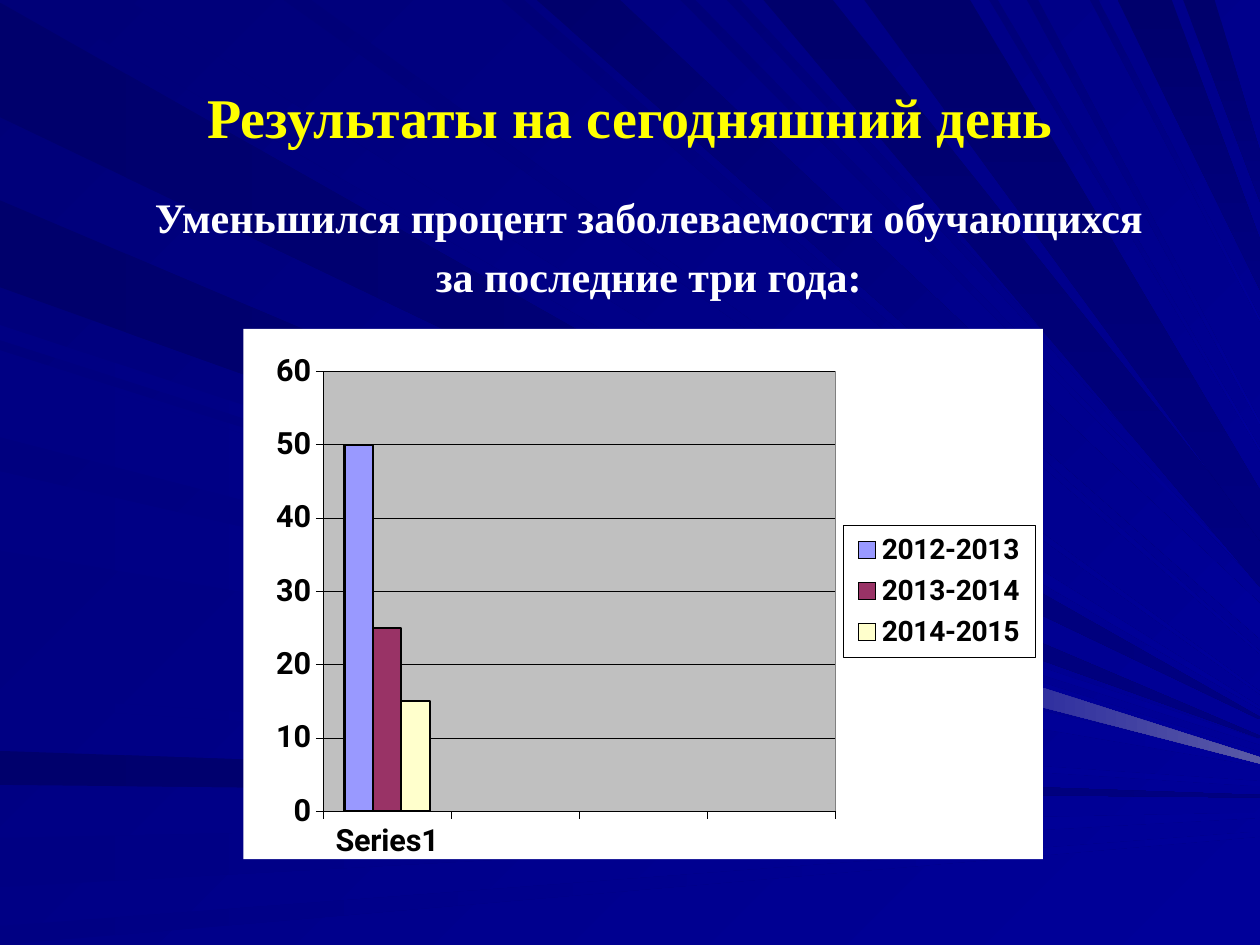
"""Build a slide with a column chart of falling sickness rates over a blue ray background."""
from lxml.etree import SubElement
from pptx import Presentation
from pptx.chart.data import CategoryChartData
from pptx.dml.color import RGBColor
from pptx.enum.chart import XL_CHART_TYPE, XL_LEGEND_POSITION, XL_TICK_MARK
from pptx.enum.text import MSO_ANCHOR, PP_ALIGN
from pptx.oxml import parse_xml
from pptx.oxml.ns import nsdecls, qn
from pptx.util import Pt

BLACK = RGBColor.from_string("000000")
WHITE = RGBColor.from_string("FFFFFF")
YELLOW = RGBColor.from_string("FFFF00")
SILVER = RGBColor.from_string("C0C0C0")
GRAY = RGBColor.from_string("808080")
MIDNIGHT = RGBColor.from_string("00006C")
INDIGO = RGBColor.from_string("000078")
COBALT = RGBColor.from_string("000083")
NAVY = RGBColor.from_string("000080")
BLUE = RGBColor.from_string("000099")
GLOW = RGBColor.from_string("5A5AA6")
PERIWINKLE = RGBColor.from_string("9999FF")
PLUM = RGBColor.from_string("993366")
CREAM = RGBColor.from_string("FFFFCC")

TITLE = "Результаты на сегодняшний день"
BODY = ["Уменьшился процент заболеваемости обучающихся", "за последние три года:"]
CATEGORIES = ["Series1", "", "", ""]
SERIES = [("2012-2013", 50, PERIWINKLE), ("2013-2014", 25, PLUM), ("2014-2015", 15, CREAM)]
PLOT_AREA = (0.1, 0.08, 0.64, 0.83)
LEGEND_AREA = (0.75, 0.37, 0.24, 0.25)
HAIRLINE = Pt(0.29)
RAY_UNIT = Pt(0.72)
RIGHT_EDGE = 1000

RAY_GROUPS = [
    {"side": "left", "colors": (MIDNIGHT, NAVY), "angle": 0, "tip": 2,
     "rays": [(2, 93, 570), (159, 228, 585), (596, 623, 632)]},
    {"side": "top", "colors": (INDIGO, BLUE), "angle": 45, "tip": 2,
     "rays": [(26, 101, 562), (225, 247, 550), (398, 416, 518), (540, 552, 463),
              (577, 588, 454), (785, 792, 357), (815, 824, 336), (865, 872, 254)]},
    {"side": "top", "colors": (MIDNIGHT, BLUE), "angle": 45, "tip": 28,
     "rays": [(426, 492, 493)]},
    {"side": "top", "colors": (MIDNIGHT, NAVY), "angle": 90, "tip": 40,
     "rays": [(606, 661, 446), (686, 770, 409), (887, 930, 210), (939, 964, 140)]},
    {"side": "left", "colors": (COBALT, BLUE), "angle": 0, "tip": 4,
     "rays": [(258, 270, 589), (278, 342, 599), (374, 437, 606), (552, 560, 622),
              (665, 704, 647), (735, 750, 662), (283, 347, 604)]},
]
GLOW_BEAM = [(637, 485), (633, 511), (RIGHT_EDGE, 606), (RIGHT_EDGE, 601)]


def set_format(target, values):
    for name, value in values.items():
        setattr(target, name, value)


def set_font(font, color, **values):
    set_format(font, {"bold": True, **values})
    font.color.rgb = color


def set_line(line, color, width):
    line.color.rgb = color
    line.width = width


def fill_gradient(fill, colors, angle):
    fill.gradient()
    fill.gradient_angle = (360 - angle) % 360
    for stop, color in zip(fill.gradient_stops, colors):
        stop.color.rgb = color


def add_ray(group, points, colors, angle):
    builder = group.shapes.build_freeform(*points[0], scale=RAY_UNIT)
    builder.add_line_segments(points[1:], close=True)
    ray = builder.convert_to_shape()
    ray.shadow.inherit = False
    ray.line.fill.background()
    fill_gradient(ray.fill, colors, angle)


def add_rays(page):
    group = page.shapes.add_group_shape()
    for family in RAY_GROUPS:
        half = family["tip"] / 2
        for start, end, tip in family["rays"]:
            if family["side"] == "left":
                base = [(0, end), (0, start)]
            else:
                base = [(start, 0), (end, 0)]
            points = base + [(RIGHT_EDGE, tip - half), (RIGHT_EDGE, tip + half)]
            add_ray(group, points, family["colors"], family["angle"])
    add_ray(group, GLOW_BEAM, (BLUE, GLOW), 0)


def write_text(box, area, lines, anchor, color, size):
    set_format(box, dict(zip(("left", "top", "width", "height"), map(Pt, area))))
    frame = box.text_frame
    set_format(frame, {"word_wrap": True, "vertical_anchor": anchor})
    for index, line in enumerate(lines):
        para = frame.add_paragraph() if index else frame.paragraphs[0]
        para.alignment = PP_ALIGN.CENTER
        if index:
            para.space_before = Pt(0.2 * size)
        span = para.add_run()
        span.text = line
        set_font(span.font, color, name="Times New Roman", size=Pt(size))


def chart_box(fill, border=None):
    edge = f'<a:solidFill><a:srgbClr val="{border}"/></a:solidFill>' if border else "<a:noFill/>"
    return parse_xml(
        f'<c:spPr {nsdecls("c", "a")}><a:solidFill><a:srgbClr val="{fill}"/></a:solidFill>'
        f'<a:ln w="{HAIRLINE}">{edge}</a:ln></c:spPr>'
    )


def chart_layout(parent, area, inner=False):
    for old in parent.findall(qn("c:layout")):
        parent.remove(old)
    layout = parse_xml(f'<c:layout {nsdecls("c")}/>')
    manual = SubElement(layout, qn("c:manualLayout"))
    settings = [("layoutTarget", "inner")] if inner else []
    settings += [("xMode", "edge"), ("yMode", "edge"), *zip("xywh", area)]
    for name, value in settings:
        SubElement(manual, qn(f"c:{name}")).set("val", str(value))
    return layout


def add_sickness_chart(page):
    data = CategoryChartData()
    data.categories = CATEGORIES
    for name, value, _ in SERIES:
        data.add_series(name, [value] + [None] * (len(CATEGORIES) - 1))
    area = map(Pt, (139, 188, 457, 303))
    chart = page.shapes.add_chart(XL_CHART_TYPE.COLUMN_CLUSTERED, *area, data).chart
    set_format(chart, {"has_title": False, "has_legend": True})
    set_font(chart.font, BLACK, name="Roboto", size=Pt(17.5))

    plot = chart.plots[0]
    set_format(plot, {"gap_width": 150, "overlap": 0, "vary_by_categories": False})
    for series, (_, _, color) in zip(plot.series, SERIES):
        series.format.fill.solid()
        series.format.fill.fore_color.rgb = color
        set_line(series.format.line, BLACK, Pt(1.15))

    for axis in (chart.category_axis, chart.value_axis):
        axis.major_tick_mark = XL_TICK_MARK.OUTSIDE
        set_line(axis.format.line, BLACK, HAIRLINE)
        set_font(axis.tick_labels.font, BLACK, name="Roboto", size=Pt(17.5))
    scale = {"minimum_scale": 0, "maximum_scale": 60, "major_unit": 10, "has_major_gridlines": True}
    set_format(chart.value_axis, scale)
    set_line(chart.value_axis.major_gridlines.format.line, BLACK, HAIRLINE)

    set_format(chart.legend, {"position": XL_LEGEND_POSITION.RIGHT, "include_in_layout": False})
    set_font(chart.legend.font, BLACK, name="Roboto", size=Pt(16.1))

    space = chart.element
    space.find(qn("c:chart")).addnext(chart_box(WHITE))
    plot_area = space.find(".//" + qn("c:plotArea"))
    plot_area.insert(0, chart_layout(plot_area, PLOT_AREA, inner=True))
    plot_area.append(chart_box(SILVER, GRAY))
    legend = space.find(".//" + qn("c:legend"))
    legend.find(qn("c:legendPos")).addnext(chart_layout(legend, LEGEND_AREA))
    legend.find(qn("c:overlay")).addnext(chart_box(WHITE, BLACK))


def main():
    deck = Presentation()
    set_format(deck, {"slide_width": Pt(720), "slide_height": Pt(540)})
    page = deck.slides.add_slide(deck.slide_layouts[5])
    fill_gradient(page.background.fill, (INDIGO, BLUE), 45)
    add_rays(page)
    title = page.shapes.title
    title.element.getparent().append(title.element)
    write_text(title, (36, 21.6, 648, 90), [TITLE], MSO_ANCHOR.MIDDLE, YELLOW, 32)
    body_area = (36, 105.84, 669.6, 79.2)
    body = page.shapes.add_textbox(*map(Pt, body_area))
    write_text(body, body_area, BODY, MSO_ANCHOR.TOP, WHITE, 24)
    add_sickness_chart(page)
    deck.save("out.pptx")


if __name__ == "__main__":
    main()
